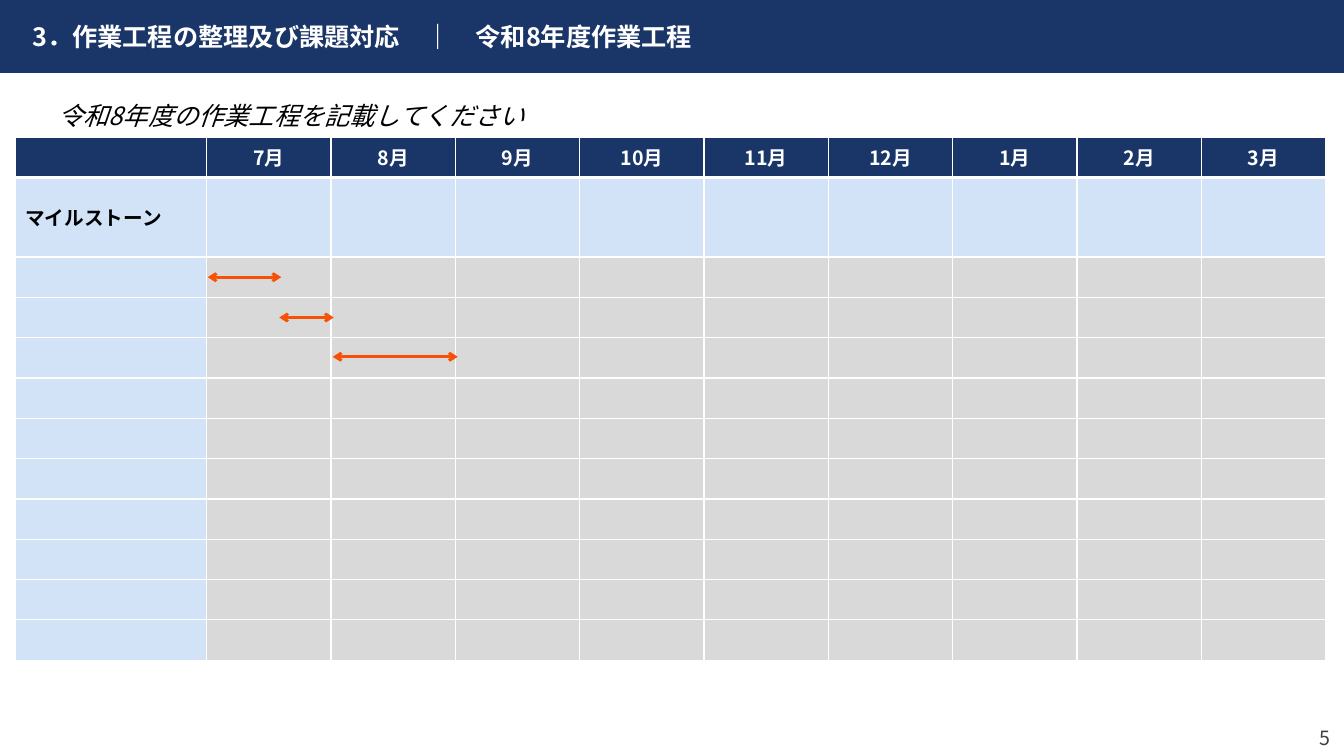
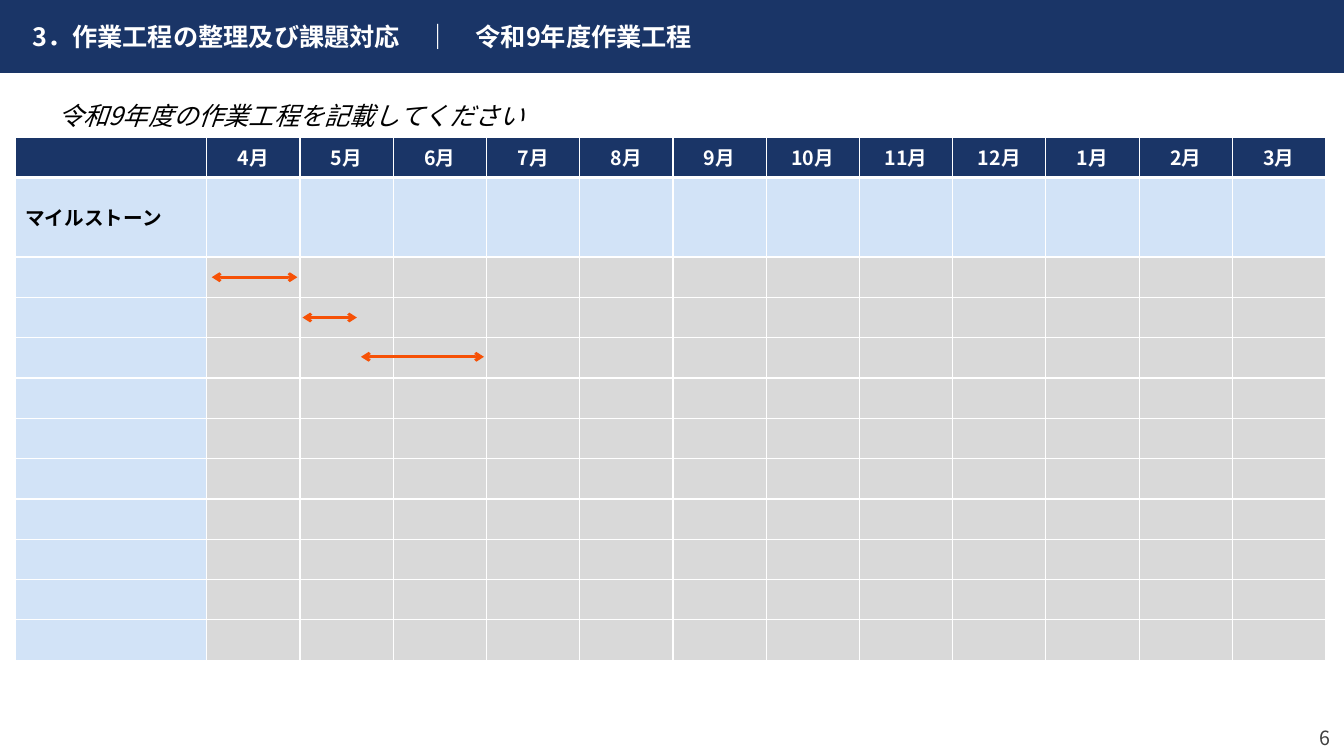
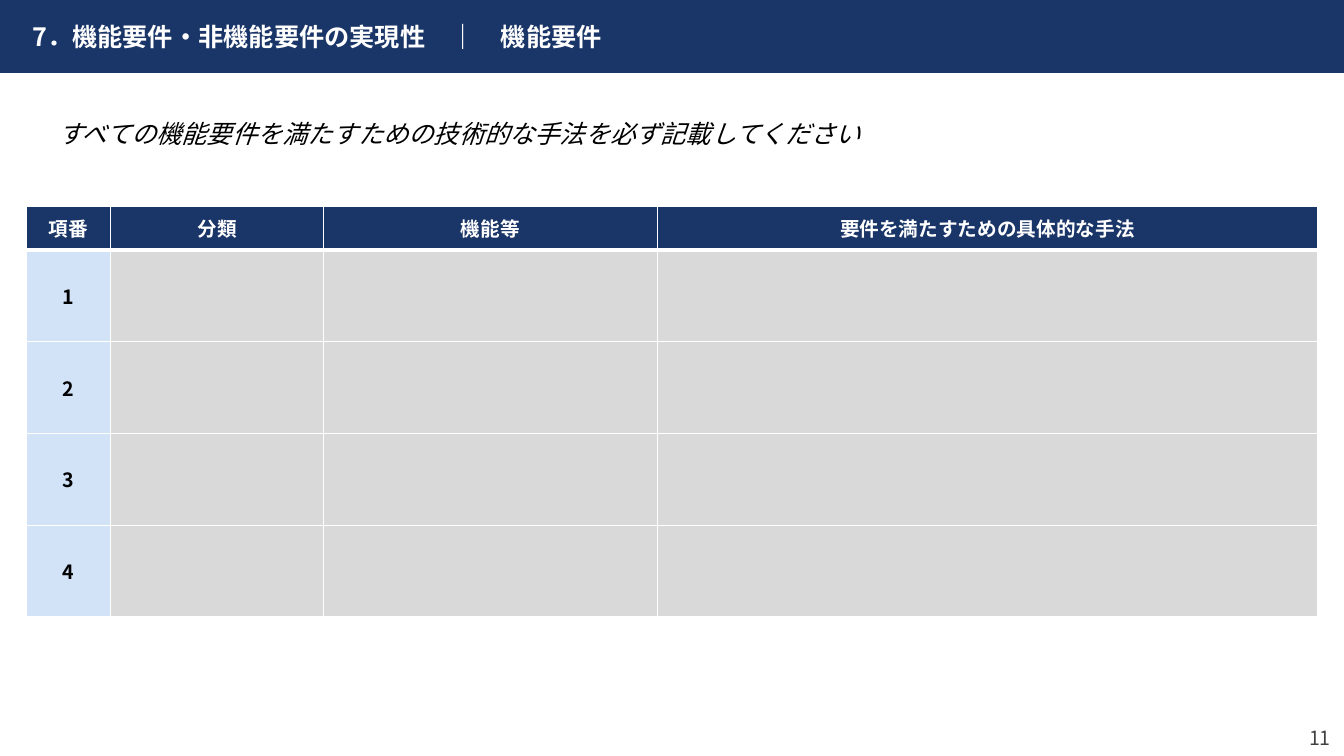
from lxml import etree
from pptx import Presentation
from pptx.dml.color import RGBColor
from pptx.enum.shapes import MSO_CONNECTOR as Line, MSO_SHAPE as Shape
from pptx.enum.text import MSO_ANCHOR as Anchor, MSO_AUTO_SIZE as Fit, PP_ALIGN as Align
from pptx.oxml.ns import qn
from pptx.util import Inches, Pt

# Shared look
FONT = "Noto Sans CJK JP"
NAVY, PALE, GREY = "1A3567", "D2E3F7", "D9D9D9"
WHITE, BLACK, DARK, ORANGE = "FFFFFF", "000000", "404040", "F65106"
WIDE, BAND = 13.33, 0.72

# Schedule grid
LEFT, TOP, LABEL, SPAN = 0.15, 1.36, 1.9, 11.1
ROWS = [0.4, 0.79] + [0.4] * 10
BARS = [2.75, 3.15, 3.54]


def paint(part, color):
    """Give a fill, or a line's fill, a solid colour."""
    part.solid()
    part.fore_color.rgb = RGBColor.from_string(color)


def style(para, size, color, bold=False, italic=False, align=Align.LEFT):
    para.alignment = align
    for run in para.runs:
        font = run.font
        font.size, font.bold, font.italic = Pt(size), bold, italic
        font.name = FONT
        font.color.rgb = RGBColor.from_string(color)
        etree.SubElement(run._r.get_or_add_rPr(), qn("a:ea"), typeface=FONT)


def place(shape, x, y, w, h):
    shape.left, shape.top = Inches(x), Inches(y)
    shape.width, shape.height = Inches(w), Inches(h)


def set_text(shape, text, anchor, inset=True):
    """Fill a text frame and return its paragraph."""
    frame = shape.text_frame
    frame.text = text
    frame.word_wrap, frame.auto_size = True, Fit.NONE
    frame.vertical_anchor = anchor
    if not inset:
        frame.margin_left = frame.margin_right = 0
        frame.margin_top = frame.margin_bottom = 0
    return frame.paragraphs[0]


# Slide frame: band, title, lead text, page number
def add_page(deck, title, lead, page, top=0.79, high=1.28):
    slide = deck.slides.add_slide(deck.slide_layouts[1])
    head, body = slide.placeholders

    band = slide.shapes.add_shape(Shape.RECTANGLE, 0, 0, Inches(WIDE), Inches(BAND))
    band.shadow.inherit = False
    paint(band.fill, NAVY)
    paint(band.line.fill, NAVY)
    band.line.width = Pt(1)
    head._element.addprevious(band._element)

    place(head, 0.32, 0, 9.5, BAND)
    style(set_text(head, title, Anchor.MIDDLE, False), 18, WHITE, bold=True)

    place(body, 0.48, top, 12.37, high)
    para = set_text(body, lead, Anchor.TOP)
    para.line_spacing, para.space_before = 1.5, Pt(0)
    props = para._p.get_or_add_pPr()
    props.set("marL", "0")
    props.set("indent", "0")
    etree.SubElement(props, qn("a:buNone"))
    style(para, 18, BLACK, italic=True)

    box = slide.shapes.add_textbox(0, 0, 0, 0)
    place(box, 12.58, 7.14, 0.62, 0.36)
    para = set_text(box, str(page), Anchor.MIDDLE, False)
    style(para, 14, DARK, align=Align.RIGHT)
    return slide


# Tables
def edge(cell, row):
    """Draw white borders, thick below the header row."""
    props = cell._tc.get_or_add_tcPr()
    wide = {"T": 3 if row == 1 else 1, "B": 3 if row == 0 else 1}
    for spot, side in enumerate("LRTB"):
        line = etree.Element(qn(f"a:ln{side}"), w=str(Pt(wide.get(side, 1))))
        fill = etree.SubElement(line, qn("a:solidFill"))
        etree.SubElement(fill, qn("a:srgbClr"), val=WHITE)
        props.insert(spot, line)


def add_grid(slide, x, y, cols, rows, texts, pale=0, align=Align.CENTER):
    """texts maps (row, column) to words; pale is a row tinted like the labels."""
    frame = slide.shapes.add_table(len(rows), len(cols), Inches(x), Inches(y),
                                   Inches(sum(cols)), Inches(sum(rows)))
    table = frame.table
    for col, wide in zip(table.columns, cols):
        col.width = Inches(wide)
    for r, high in enumerate(rows):
        table.rows[r].height = Inches(high)
        for c in range(len(cols)):
            cell = table.cell(r, c)
            tint = NAVY if r == 0 else PALE if c == 0 or r == pale else GREY
            paint(cell.fill, tint)
            edge(cell, r)
            cell.vertical_anchor = Anchor.MIDDLE
            para = cell.text_frame.paragraphs[0]
            if (r, c) in texts:
                para.text = texts[r, c]
                style(para, 14, BLACK if r else WHITE, bold=True,
                      align=align if r else Align.CENTER)
            else:
                para._p.get_or_add_endParaRPr().set("sz", "1400")


def add_arrow(slide, start, end, y):
    arrow = slide.shapes.add_connector(Line.STRAIGHT, Inches(start), Inches(y),
                                       Inches(end), Inches(y))
    paint(arrow.line.fill, ORANGE)
    arrow.line.width = Pt(2)
    for tip in ("headEnd", "tailEnd"):
        etree.SubElement(arrow.line._get_or_add_ln(), qn(f"a:{tip}"), type="arrow")
    etree.SubElement(arrow._element.spPr, qn("a:effectLst"))


def add_plan(deck, year, page, first, spans):
    """Yearly schedule from the first month through March."""
    slide = add_page(deck, f"3．作業工程の整理及び課題対応　｜　令和{year}年度作業工程",
                     f"令和{year}年度の作業工程を記載してください", page)
    months = [f"{(m - 1) % 12 + 1}月" for m in range(first, 16)]
    texts = {(0, c): month for c, month in enumerate(months, 1)}
    texts[1, 0] = "マイルストーン"
    cols = [LABEL] + [SPAN / len(months)] * len(months)
    add_grid(slide, LEFT, TOP, cols, ROWS, texts, pale=1, align=Align.LEFT)
    for (start, end), y in zip(spans, BARS):
        add_arrow(slide, start, end, y)


def add_needs(deck):
    """Table of functional requirements."""
    slide = add_page(deck, "7．機能要件・非機能要件の実現性　｜　機能要件",
                     "すべての機能要件を満たすための技術的な手法を必ず記載してください",
                     11, top=0.97, high=1.43)
    heads = ["項番", "分類", "機能等", "要件を満たすための具体的な手法"]
    texts = {(0, c): head for c, head in enumerate(heads)}
    texts.update({(n, 0): str(n) for n in range(1, 5)})
    add_grid(slide, 0.26, 2.05, [0.84, 2.11, 3.31, 6.55], [0.43] + [0.91] * 4, texts)


def main():
    deck = Presentation()
    deck.slide_width, deck.slide_height = Inches(WIDE), Inches(7.5)
    add_plan(deck, 8, 5, 7, [(2.06, 2.79), (2.77, 3.31), (3.3, 4.54)])
    add_plan(deck, 9, 6, 4, [(2.1, 2.95), (3, 3.54), (3.58, 4.8)])
    add_needs(deck)
    deck.save("out.pptx")


if __name__ == "__main__":
    main()
